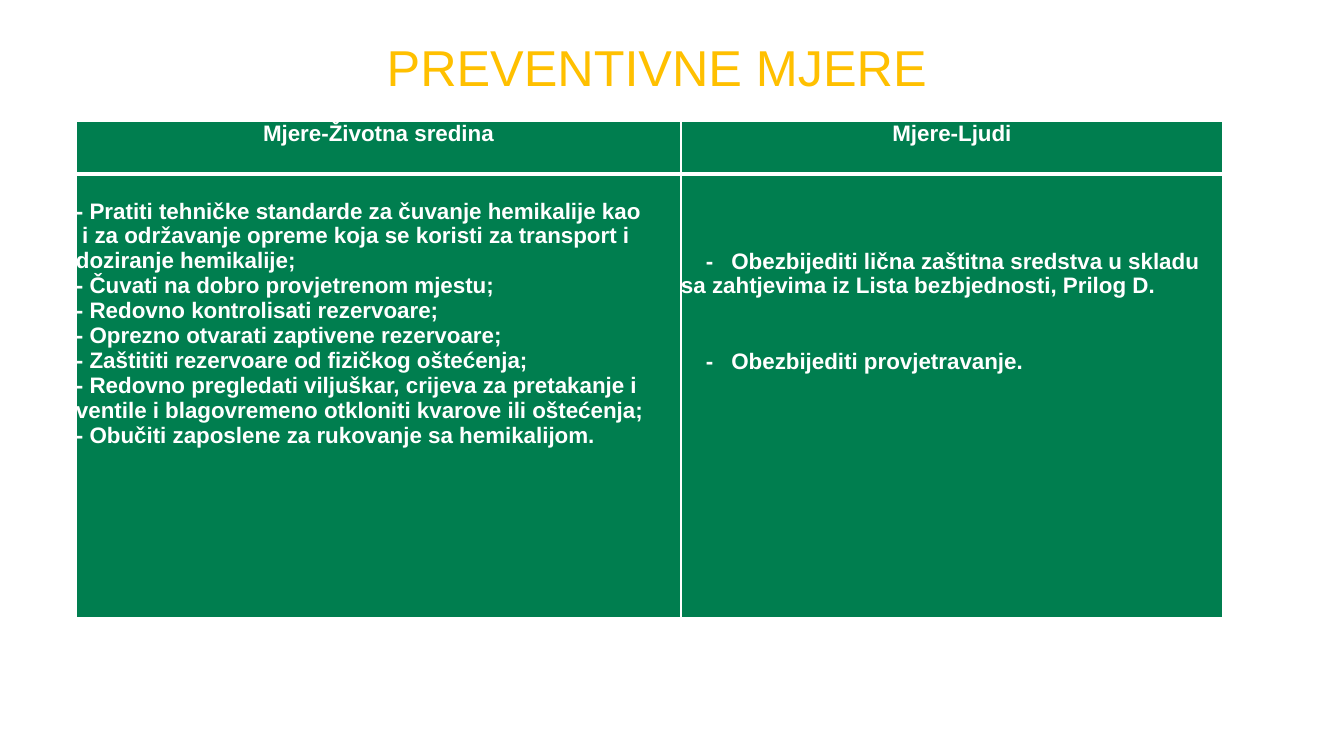
from lxml import etree
from pptx import Presentation
from pptx.dml.color import RGBColor
from pptx.enum.text import MSO_ANCHOR, PP_ALIGN
from pptx.oxml.ns import qn
from pptx.util import Pt

CENTER, LEFT = PP_ALIGN.CENTER, PP_ALIGN.LEFT
TOP = MSO_ANCHOR.TOP

WHITE = RGBColor(0xFF, 0xFF, 0xFF)
GREEN = RGBColor(0x00, 0x7E, 0x4F)
GOLD = RGBColor(0xFF, 0xC0, 0x00)

TITLE_FONT = {"name": "Arial", "size": Pt(36), "bold": False}
TABLE_FONT = {"name": "Arial", "size": Pt(16), "bold": True}

HEADINGS = ["Mjere-Životna sredina", "Mjere-Ljudi"]
ENVIRONMENT_MEASURES = [
    "- Pratiti tehničke standarde za čuvanje hemikalije kao\v i za održavanje "
    "opreme koja se koristi za transport i doziranje hemikalije;",
    "- Čuvati na dobro provjetrenom mjestu;",
    "- Redovno kontrolisati rezervoare;",
    "- Oprezno otvarati zaptivene rezervoare;",
    "- Zaštititi rezervoare od fizičkog oštećenja;",
    "- Redovno pregledati viljuškar, crijeva za pretakanje i ventile i "
    "blagovremeno otkloniti kvarove ili oštećenja;",
    "- Obučiti zaposlene za rukovanje sa hemikalijom.",
]
PEOPLE_MEASURES = [
    "-\tObezbijediti lična zaštitna sredstva u skladu sa zahtjevima iz "
    "Lista bezbjednosti, Prilog D.",
    "-\tObezbijediti provjetravanje.",
]


def px(length):
    """Turn pixels (100.8 to the inch) into EMU."""
    return round(length * 914400 / 100.8)


def style_runs(paragraph, font_values, color):
    for run in paragraph.runs:
        for name, value in font_values.items():
            setattr(run.font, name, value)
        run.font.color.rgb = color


def add_title(slide, text, left, top, width, height):
    title = slide.shapes.title
    title.left, title.top = px(left), px(top)
    title.width, title.height = px(width), px(height)
    frame = title.text_frame
    frame.text = text
    frame.word_wrap = True
    frame.vertical_anchor = TOP
    paragraph = frame.paragraphs[0]
    paragraph.alignment = CENTER
    paragraph.line_spacing = 1.0
    style_runs(paragraph, TITLE_FONT, GOLD)


def set_border(cell, side, points):
    line = etree.SubElement(cell._tc.get_or_add_tcPr(), qn(f"a:ln{side}"), w=str(Pt(points)))
    fill = etree.SubElement(line, qn("a:solidFill"))
    etree.SubElement(fill, qn("a:srgbClr"), val=str(WHITE))


def fill_cell(cell, texts, alignment=LEFT, top_margin=0, gap=0, indent=0, tab=0):
    """Write one paragraph per text, with white borders on a green cell."""
    margins = {"left": 0, "right": 0, "top": top_margin, "bottom": 0}
    for side, length in margins.items():
        setattr(cell, f"margin_{side}", px(length))
    cell.vertical_anchor = TOP
    cell.text = "\n".join(texts)
    for number, paragraph in enumerate(cell.text_frame.paragraphs):
        paragraph.alignment = alignment
        properties = paragraph._p.get_or_add_pPr()
        if indent:
            properties.set("marL", "0")
            properties.set("indent", str(px(indent)))
        if tab:
            stops = etree.SubElement(properties, qn("a:tabLst"))
            etree.SubElement(stops, qn("a:tab"), pos=str(px(tab)), algn="l")
        if gap and number:
            paragraph.space_before = Pt(gap)
        style_runs(paragraph, TABLE_FONT, WHITE)


def add_measures_table(slide, left, top, column_widths, row_heights):
    frame = slide.shapes.add_table(
        len(row_heights), len(column_widths), px(left), px(top),
        px(sum(column_widths)), px(sum(row_heights)))
    table = frame.table
    table.horz_banding = False
    for column, width in zip(table.columns, column_widths):
        column.width = px(width)
    for row, height in zip(table.rows, row_heights):
        row.height = px(height)

    # Heading row and the two lists of measures
    for column, heading in enumerate(HEADINGS):
        fill_cell(table.cell(0, column), [heading], alignment=CENTER)
    fill_cell(table.cell(1, 0), ENVIRONMENT_MEASURES, top_margin=25)
    fill_cell(table.cell(1, 1), PEOPLE_MEASURES, top_margin=75, gap=36, indent=25, tab=63)

    # Borders, thick below the headings
    for row, thick_side in enumerate("BT"):
        for column in range(len(column_widths)):
            cell = table.cell(row, column)
            for side in "LRTB":
                set_border(cell, side, 3 if side == thick_side else 1)
            cell.fill.solid()
            cell.fill.fore_color.rgb = GREEN


def main():
    presentation = Presentation()
    presentation.slide_width, presentation.slide_height = px(1344), px(756)
    slide = presentation.slides.add_slide(presentation.slide_layouts[5])
    add_title(slide, "PREVENTIVNE MJERE", 57, 31, 1200, 80)
    add_measures_table(slide, 76, 121, [605, 542], [53, 444])
    presentation.save("out.pptx")


if __name__ == "__main__":
    main()
